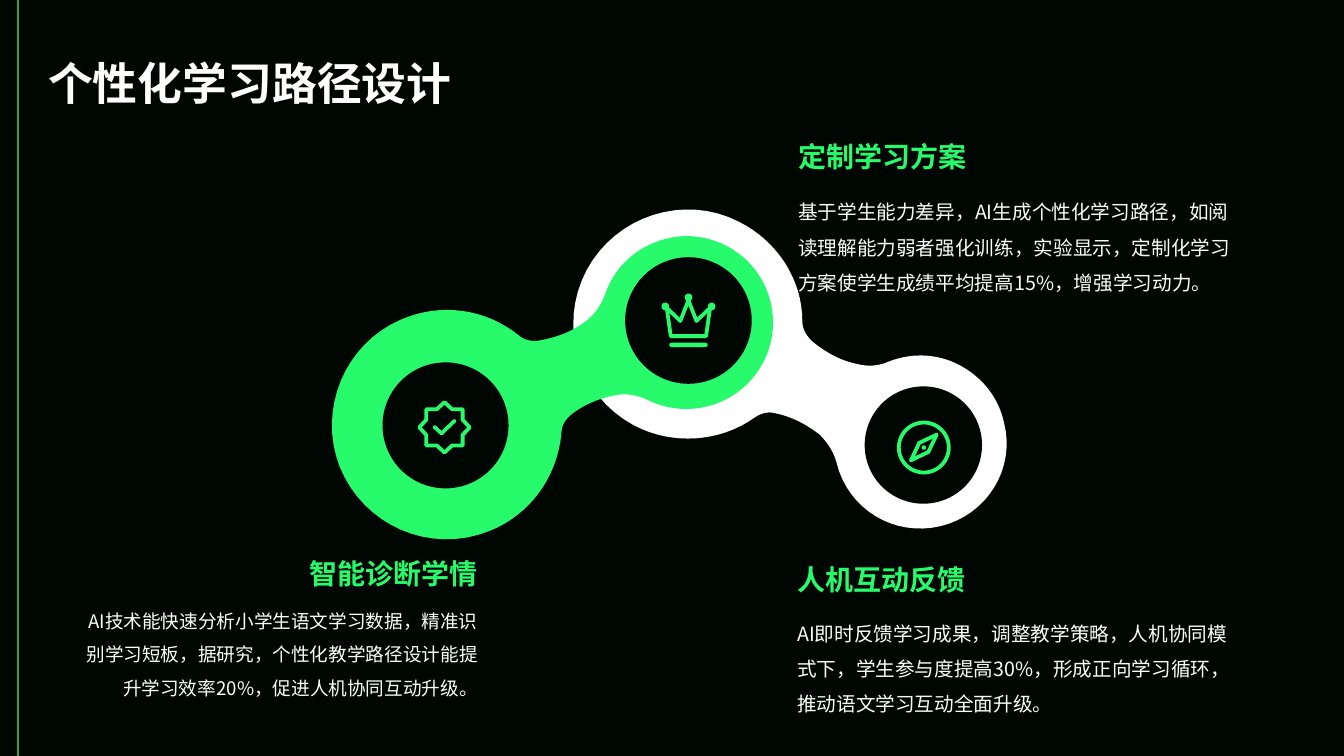
import math

import pptx
import pptx.dml.color
import pptx.enum.shapes
import pptx.enum.text
import pptx.oxml
import pptx.oxml.ns
import pptx.util

RGBColor = pptx.dml.color.RGBColor
BLACK = RGBColor(0x00, 0x07, 0x02)
GREEN = RGBColor(0x27, 0xFB, 0x6B)
DIM_GREEN = RGBColor(0x35, 0xA0, 0x50)
WHITE = RGBColor(0xFF, 0xFF, 0xFF)
PALE = RGBColor(0xFB, 0xFF, 0xFC)
FONT = "Noto Sans CJK SC"

# The page is a grid of 133.3 columns by 75 rows of square cells.
CELL = pptx.util.Inches(0.1)
COLUMNS, ROWS = 133.33, 75
ICON_STROKE = 2.7
CURVE_STEPS = 16

LEFT = pptx.enum.text.PP_ALIGN.LEFT
RIGHT = pptx.enum.text.PP_ALIGN.RIGHT
OVAL = pptx.enum.shapes.MSO_SHAPE.OVAL
ROUNDED = pptx.enum.shapes.MSO_SHAPE.ROUNDED_RECTANGLE

# Each blob is a start point followed by Bezier segments of three points.
WHITE_BLOB = [
    (95.5, 36.4),
    (93.3, 35.1, 90.6, 34.9, 88.1, 35.9), (87.2, 36.3, 86.1, 36.4, 85, 36.1),
    (83.4, 35.8, 81.8, 34.9, 80.5, 33.8), (80, 33.3, 79.6, 32.6, 79.6, 31.9),
    (79.6, 27.7, 77.1, 23.9, 73.3, 22), (67.9, 19.2, 61.1, 21.4, 58.2, 26.8),
    (55.3, 32.3, 57.3, 39.2, 62.9, 42.2), (66.7, 44.2, 71.4, 43.9, 74.9, 41.4),
    (75.5, 41, 76.2, 40.8, 76.9, 41), (78.5, 41.3, 80, 42.1, 81.3, 43.1),
    (82.1, 43.9, 82.7, 44.8, 83, 45.9), (84.1, 50.5, 88.7, 53.3, 93.3, 52.2),
    (97.9, 51.1, 100.8, 46.5, 99.6, 41.9), (99.1, 39.6, 97.6, 37.6, 95.5, 36.4),
]
GREEN_BLOB = [
    (65.1, 24),
    (62.7, 24.9, 60.8, 26.8, 60, 29.3), (59.6, 30.3, 59, 31.2, 58.2, 31.8),
    (56.8, 32.9, 55.2, 33.5, 53.4, 33.8), (52.7, 33.9, 52, 33.7, 51.5, 33.3),
    (48.2, 30.6, 43.7, 30, 39.8, 31.7), (34.2, 34.1, 31.5, 40.6, 33.7, 46.3),
    (36.1, 52.2, 42.7, 55, 48.5, 52.7), (52.6, 51.1, 55.3, 47.3, 55.7, 43),
    (55.7, 42.2, 56.1, 41.6, 56.7, 41.1), (58, 40.1, 59.5, 39.5, 61.1, 39.2),
    (62.2, 39, 63.3, 39.2, 64.3, 39.7), (68.6, 41.8, 73.7, 40, 75.8, 35.8),
    (77.9, 31.6, 76.2, 26.4, 71.9, 24.3), (69.8, 23.3, 67.4, 23.1, 65.1, 24),
]


def cells(*counts):
    return [round(count * CELL) for count in counts]


def paint(shape, fill=None, stroke=None):
    shape.shadow.inherit = False
    if fill is None:
        shape.fill.background()
    else:
        shape.fill.solid()
        shape.fill.fore_color.rgb = fill
    if stroke is None:
        shape.line.fill.background()
    else:
        shape.line.color.rgb = stroke
        shape.line.width = pptx.util.Pt(ICON_STROKE)
        outline = shape.line._get_or_add_ln()
        outline.set("cap", "rnd")
        outline.append(pptx.oxml.parse_xml(
            f"<a:round {pptx.oxml.ns.nsdecls('a')}/>"))


def add_polygon(page, points, closed=True, **colours):
    corners = [cells(*point) for point in points]
    builder = page.shapes.build_freeform(*corners[0], scale=1.0)
    builder.add_line_segments(corners[1:], close=closed)
    paint(builder.convert_to_shape(), **colours)


def bezier_points(blob):
    points = [blob[0]]
    for x1, y1, x2, y2, x3, y3 in blob[1:]:
        x0, y0 = points[-1]
        for step in range(1, CURVE_STEPS + 1):
            t = step / CURVE_STEPS
            u = 1 - t
            points.append(tuple(
                u**3 * a + 3 * u * u * t * b + 3 * u * t * t * c + t**3 * d
                for a, b, c, d in ((x0, x1, x2, x3), (y0, y1, y2, y3))))
    return points


def add_circle(page, x, y, radius, **colours):
    box = cells(x - radius, y - radius, 2 * radius, 2 * radius)
    paint(page.shapes.add_shape(OVAL, *box), **colours)


def add_badge_icon(page, x, y):
    quarter = [(0, -2.5), (0.75, -1.8), (1.8, -1.8), (1.8, -0.75)]
    points = []
    for turn in range(4):
        cos = round(math.cos(turn * math.pi / 2))
        sin = round(math.sin(turn * math.pi / 2))
        points += [(x + dx * cos - dy * sin, y + dx * sin + dy * cos)
                   for dx, dy in quarter]
    add_polygon(page, points, stroke=GREEN)
    check = [(x - 1, y - 0.05), (x - 0.3, y + 0.6), (x + 1, y - 0.65)]
    add_polygon(page, check, closed=False, stroke=GREEN)


def add_crown_icon(page, x, y):
    right = [(0.8, 0.55), (2.15, -0.75), (1.75, 2.05)]
    left = [(-dx, dy) for dx, dy in reversed(right)]
    crown = [(x + dx, y + dy) for dx, dy in [(0, -1.5)] + right + left]
    add_polygon(page, crown, stroke=GREEN)
    for dx, dy in ((-2.3, -0.9), (0, -1.8), (2.3, -0.9)):
        add_circle(page, x + dx, y + dy, 0.38, fill=GREEN)
    base = page.shapes.add_shape(ROUNDED, *cells(x - 1.9, y + 2.7, 3.8, 0.43))
    base.adjustments[0] = 0.5
    paint(base, fill=GREEN)


def add_compass_icon(page, x, y):
    add_circle(page, x, y, 2.48, stroke=GREEN)
    add_circle(page, x, y, 0.22, fill=GREEN)
    needle = [(-1.28, 1.28), (-0.45, -0.45), (1.28, -1.28), (0.45, 0.45)]
    add_polygon(page, [(x + dx, y + dy) for dx, dy in needle], stroke=GREEN)


def add_text(page, text, place, size, colour, align=LEFT, heading=True):
    """Headings are bold and centred in height; body text is set wide."""
    box = page.shapes.add_textbox(*cells(*place))
    frame = box.text_frame
    frame.word_wrap = True
    if heading:
        frame.vertical_anchor = pptx.enum.text.MSO_ANCHOR.MIDDLE
    para = frame.paragraphs[0]
    para.text = text
    para.alignment = align
    para.line_spacing = 1.2 if heading else 1.5
    para.space_before = para.space_after = pptx.util.Pt(0 if heading else 3)
    font = para.font
    font.name = FONT
    font.size = pptx.util.Pt(size)
    font.bold = heading
    font.color.rgb = colour
    properties = para._p.pPr.find(pptx.oxml.ns.qn("a:defRPr"))
    properties.append(pptx.oxml.parse_xml(
        f'<a:ea {pptx.oxml.ns.nsdecls("a")} typeface="{FONT}"/>'))


def add_section(page, heading, body, left, width, top, gap, height,
                size=14, align=LEFT):
    add_text(page, heading, (left, top, width, 5.1), 20, GREEN, align)
    add_text(page, body, (left, top + gap, width, height), size, PALE, align,
             heading=False)


def add_margin_line(page, x):
    line = page.shapes.add_connector(
        pptx.enum.shapes.MSO_CONNECTOR.STRAIGHT, *cells(x, 0, x, ROWS))
    line.line.color.rgb = DIM_GREEN
    line.line.width = pptx.util.Pt(1)
    line._element.spPr.append(pptx.oxml.parse_xml(
        f"<a:effectLst {pptx.oxml.ns.nsdecls('a')}/>"))


def main():
    deck = pptx.Presentation()
    deck.slide_width, deck.slide_height = cells(COLUMNS, ROWS)
    page = deck.slides.add_slide(deck.slide_layouts[6])
    page.background.fill.solid()
    page.background.fill.fore_color.rgb = BLACK

    add_margin_line(page, 1.8)
    add_polygon(page, bezier_points(WHITE_BLOB), fill=WHITE)
    add_polygon(page, bezier_points(GREEN_BLOB), fill=GREEN)
    for x, y, radius in ((44.2, 42.2, 6.25), (68.3, 31.8, 6.28), (91.6, 44.15, 5.82)):
        add_circle(page, x, y, radius, fill=BLACK)

    add_section(page, "智能诊断学情",
                "AI技术能快速分析小学生语文学习数据，精准识别学习短板，据研究，"
                "个性化教学路径设计能提升学习效率20%，促进人机协同互动升级。",
                6.5, 41.9, 54, 4.9, 11.5, size=13.3, align=RIGHT)
    add_section(page, "人机互动反馈",
                "AI即时反馈学习成果，调整教学策略，人机协同模式下，"
                "学生参与度提高30%，形成正向学习循环，推动语文学习互动全面升级。",
                78.1, 46.3, 54.6, 5.4, 12.9)
    add_section(page, "定制学习方案",
                "基于学生能力差异，AI生成个性化学习路径，如阅读理解能力弱者强化训练，"
                "实验显示，定制化学习方案使学生成绩平均提高15%，增强学习动力。",
                78.2, 46.3, 12.6, 5.6, 11.7)

    add_badge_icon(page, 44.1, 42.4)
    add_crown_icon(page, 68.3, 31.3)
    add_compass_icon(page, 91.65, 44.4)
    add_text(page, "个性化学习路径设计", (3.8, 3.7, 125.7, 7.9), 32, WHITE)
    deck.save("out.pptx")


if __name__ == "__main__":
    main()
